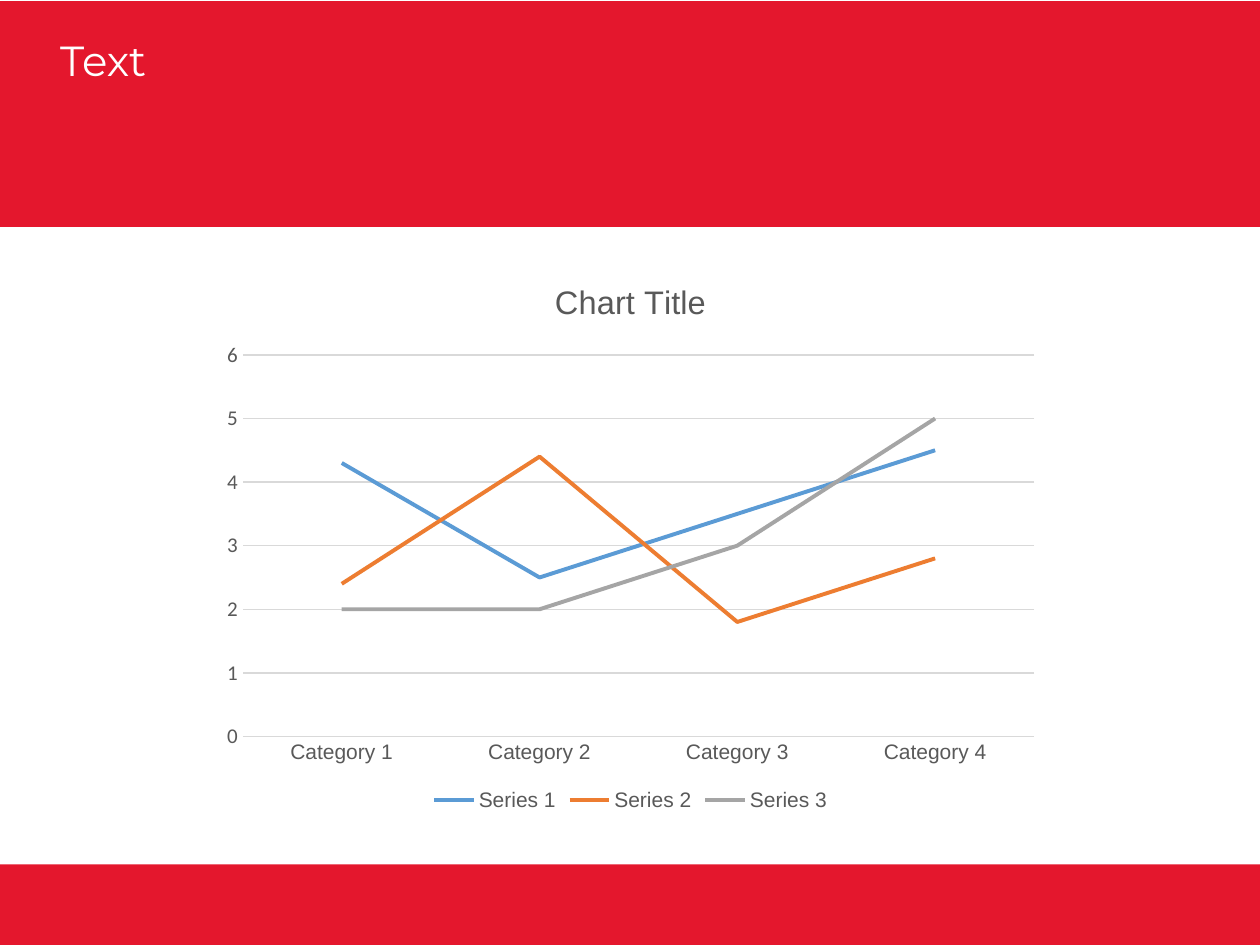
"""Build a slide with red bands, a heading and a line chart."""
from pptx import Presentation
from pptx import util as u
from pptx.chart import data
from pptx.dml.color import RGBColor
from pptx.enum import chart as ch, shapes, text

HUES = {"red": "E4172D", "white": "FFFFFF", "grey": "595959", "grid": "D9D9D9"}
LINES = {
    "Series 1": ("5B9BD5", (4.3, 2.5, 3.5, 4.5)),
    "Series 2": ("ED7D31", (2.4, 4.4, 1.8, 2.8)),
    "Series 3": ("A5A5A5", (2, 2, 3, 5)),
}


def style(font, face, size, hue):
    font.name = face
    font.size = u.Pt(size)
    font.bold = False
    font.color.rgb = RGBColor.from_string(HUES[hue])


def draw(line, hue, width):
    line.color.rgb = RGBColor.from_string(hue)
    line.width = u.Pt(width)


deck = Presentation()
deck.slide_width, deck.slide_height = u.Inches(10), u.Inches(7.5)
slide = deck.slides.add_slide(deck.slide_layouts[6])

for top, height in ((6.86, 0.64), (0.01, 1.79)):
    band = slide.shapes.add_shape(
        shapes.MSO_SHAPE.RECTANGLE, 0, u.Inches(top), u.Inches(10), u.Inches(height))
    band.shadow.inherit = False
    band.fill.solid()
    band.fill.fore_color.rgb = RGBColor.from_string(HUES["red"])
    band.line.fill.background()

head = slide.shapes.add_textbox(
    u.Inches(0.38), u.Inches(0.27), u.Inches(9.24), u.Inches(1.21)).text_frame
head.word_wrap = True
head.vertical_anchor = text.MSO_ANCHOR.TOP
head.text = "Text"
head.paragraphs[0].line_spacing = 0.9
style(head.paragraphs[0].runs[0].font, "Montserrat", 24, "white")

stats = data.CategoryChartData()
stats.categories = [f"Category {n}" for n in range(1, 5)]
for name, (hue, vals) in LINES.items():
    stats.add_series(name, vals)
chart = slide.shapes.add_chart(
    ch.XL_CHART_TYPE.LINE, u.Inches(1.67), u.Inches(2.04),
    u.Inches(6.67), u.Inches(4.44), stats).chart
style(chart.font, "Calibri", 10, "grey")
chart.has_title = True
title = chart.chart_title.text_frame
title.text = "Chart Title"
style(title.paragraphs[0].runs[0].font, "Arial", 18.6, "grey")
chart.chart_title.include_in_layout = False

chart.has_legend = True
chart.legend.position = ch.XL_LEGEND_POSITION.BOTTOM
chart.legend.include_in_layout = False
style(chart.legend.font, "Arial", 12, "grey")

for axis, face in ((chart.category_axis, "Arial"), (chart.value_axis, "Calibri")):
    axis.major_tick_mark = axis.minor_tick_mark = ch.XL_TICK_MARK.NONE
    style(axis.tick_labels.font, face, 12, "grey")
draw(chart.category_axis.format.line, HUES["grid"], 0.75)
scale = chart.value_axis
scale.minimum_scale, scale.maximum_scale, scale.major_unit = 0, 6, 1
scale.format.line.fill.background()
scale.has_major_gridlines = True
draw(scale.major_gridlines.format.line, HUES["grid"], 0.75)

plot = chart.plots[0]
plot.vary_by_categories = False
for line, (hue, vals) in zip(plot.series, LINES.values()):
    line.smooth = False
    line.marker.style = ch.XL_MARKER_STYLE.NONE
    draw(line.format.line, hue, 2.25)

deck.save("out.pptx")
